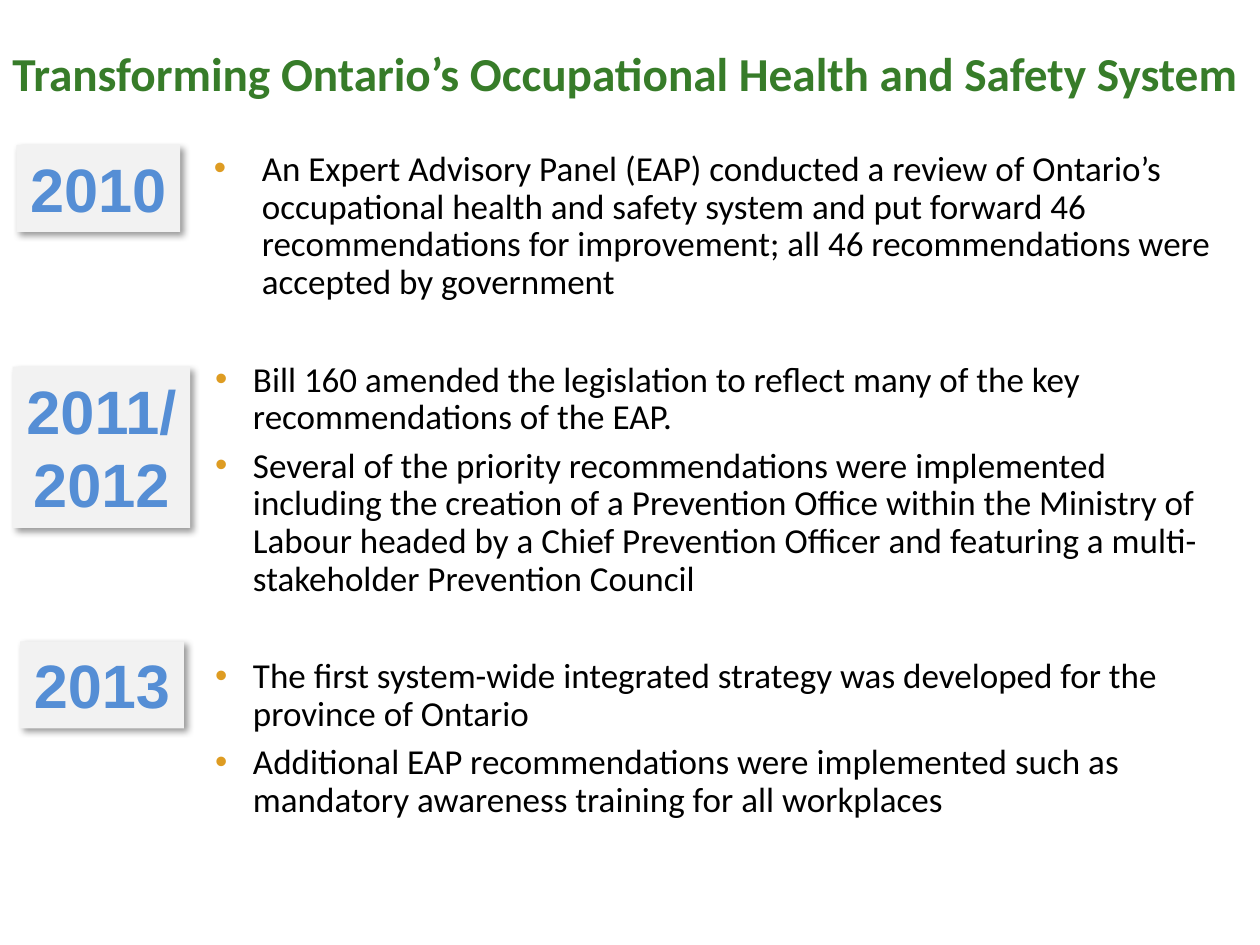
import dataclasses

import lxml.etree
import pptx
import pptx.dml.color
import pptx.enum.shapes
import pptx.enum.text
import pptx.oxml
import pptx.oxml.ns
import pptx.util

Inches = pptx.util.Inches
Pt = pptx.util.Pt
qn = pptx.oxml.ns.qn
NAMESPACE = pptx.oxml.ns.nsdecls("a")


@dataclasses.dataclass(frozen=True)
class Theme:
    title_color: str = "377C29"
    text_color: str = "000000"
    bullet_color: str = "DE9C22"
    year_color: str = "558ED5"
    year_outline: str = "467AB8"
    year_fill: str = "F2F2F2"
    text_font: str = "Calibri"
    year_font: str = "Arial"
    title_size: int = 27
    text_size: int = 20
    year_size: int = 35
    item_gap: int = 6
    section_gap: int = 34


def apply_format(target, values):
    for name, value in values.items():
        setattr(target, name, value)


def style_font(font, name, size, color, bold=False):
    apply_format(font, {"name": name, "size": Pt(size), "bold": bold})
    font.color.rgb = pptx.dml.color.RGBColor.from_string(color)


class TimelinePage:
    def __init__(self, page, theme):
        self.page = page
        self.theme = theme

    def text_box(self, left, top, width, height):
        box = self.page.shapes.add_textbox(
            Inches(left), Inches(top), Inches(width), Inches(height))
        box.text_frame.word_wrap = True
        return box.text_frame

    def title(self, text, *place):
        para = self.text_box(*place).paragraphs[0]
        span = para.add_run()
        span.text = text
        style_font(span.font, self.theme.text_font, self.theme.title_size,
                   self.theme.title_color, bold=True)

    def bullet(self, para, text, indent, hang, space_before):
        properties = para._p.get_or_add_pPr()
        properties.set("marL", str(Inches(indent)))
        properties.set("indent", str(-Inches(hang)))
        apply_format(para, {"line_spacing": 0.9, "space_before": Pt(space_before)})
        for xml in (
            f'<a:buClr {NAMESPACE}><a:srgbClr val="{self.theme.bullet_color}"/></a:buClr>',
            f'<a:buFont {NAMESPACE} typeface="Arial"/>',
            f'<a:buChar {NAMESPACE} char="•"/>',
        ):
            properties.append(lxml.etree.fromstring(xml))
        span = para.add_run()
        span.text = text
        style_font(span.font, self.theme.text_font, self.theme.text_size,
                   self.theme.text_color)

    def sections(self, sections, *place):
        """Write each section's bullets, with a wider gap between sections."""
        frame = self.text_box(*place)
        for section_index, items in enumerate(sections):
            for item_index, text in enumerate(items):
                first = section_index == item_index == 0
                para = frame.paragraphs[0] if first else frame.add_paragraph()
                indent, hang = (0.47, 0.38) if first else (0.4, 0.3)
                gap = self.theme.item_gap if item_index else self.theme.section_gap
                self.bullet(para, text, indent, hang, 0 if first else gap)

    def drop_shadow(self, box):
        box.shadow.inherit = False
        effects = box._element.spPr.find(qn("a:effectLst"))
        effects.append(lxml.etree.fromstring(
            f'<a:outerShdw {NAMESPACE} blurRad="{Pt(4)}" dist="{Pt(3)}" '
            'dir="2700000" algn="tl" rotWithShape="0">'
            '<a:srgbClr val="000000"><a:alpha val="40000"/></a:srgbClr>'
            '</a:outerShdw>'))

    def outline_text(self, span):
        span._r.get_or_add_rPr().insert(0, lxml.etree.fromstring(
            f'<a:ln {NAMESPACE} w="{Pt(0.83)}"><a:solidFill>'
            f'<a:srgbClr val="{self.theme.year_outline}"/></a:solidFill></a:ln>'))

    def year(self, lines, left, top, width, height):
        box = self.page.shapes.add_shape(
            pptx.enum.shapes.MSO_SHAPE.RECTANGLE,
            Inches(left), Inches(top), Inches(width), Inches(height))
        box.fill.solid()
        box.fill.fore_color.rgb = pptx.dml.color.RGBColor.from_string(
            self.theme.year_fill)
        box.line.fill.background()
        self.drop_shadow(box)
        frame = box.text_frame
        apply_format(frame, {
            "word_wrap": False,
            "auto_size": pptx.enum.text.MSO_AUTO_SIZE.SHAPE_TO_FIT_TEXT,
            "vertical_anchor": pptx.enum.text.MSO_ANCHOR.TOP,
        })
        for index, text in enumerate(lines):
            para = frame.add_paragraph() if index else frame.paragraphs[0]
            para.alignment = pptx.enum.text.PP_ALIGN.CENTER
            span = para.add_run()
            span.text = text
            style_font(span.font, self.theme.year_font, self.theme.year_size,
                       self.theme.year_color, bold=True)
            self.outline_text(span)


SECTIONS = [
    ["An Expert Advisory Panel (EAP) conducted a review of Ontario’s "
     "occupational health and safety system and put forward 46 recommendations "
     "for improvement; all 46 recommendations were accepted by government"],
    ["Bill 160 amended the legislation to reflect many of the key "
     "recommendations of the EAP.",
     "Several of the priority recommendations were implemented including the "
     "creation of a Prevention Office within the Ministry of Labour headed by a "
     "Chief Prevention Officer and featuring a multi-stakeholder Prevention Council"],
    ["The first system-wide integrated strategy was developed for the province "
     "of Ontario",
     "Additional EAP recommendations were implemented such as mandatory "
     "awareness training for all workplaces"],
]

YEARS = [
    (["2010"], 0.13, 1.15, 1.3, 0.69),
    (["2011/", "2012"], 0.1, 2.91, 1.41, 1.28),
    (["2013"], 0.16, 5.09, 1.3, 0.69),
]


def main():
    deck = pptx.Presentation()
    apply_format(deck, {"slide_width": Inches(10), "slide_height": Inches(7.5)})
    timeline = TimelinePage(deck.slides.add_slide(deck.slide_layouts[6]), Theme())
    timeline.title("Transforming Ontario’s Occupational Health and Safety System",
                   0, 0.3, 10.24, 1.01)
    timeline.sections(SECTIONS, 1.51, 1.15, 8.24, 6.18)
    for lines, *place in YEARS:
        timeline.year(lines, *place)
    deck.save("out.pptx")


if __name__ == "__main__":
    main()
